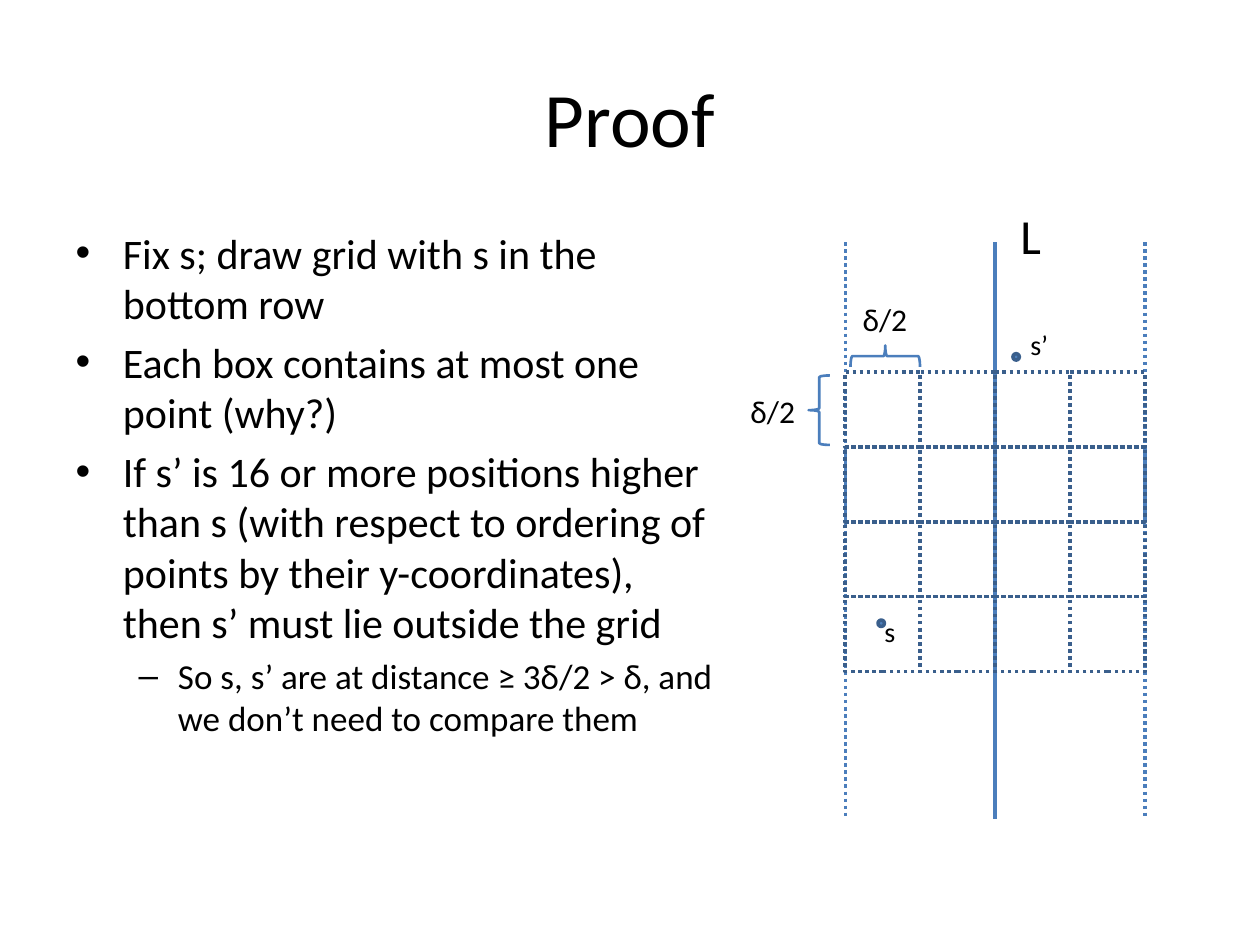
"""Build the slide that proves the closest-pair grid bound."""
import pptx
import pptx.dml.color
import pptx.enum.dml
import pptx.enum.shapes
import pptx.enum.text
import pptx.oxml.ns
import pptx.util
from lxml import etree

Cm, Pt = pptx.util.Cm, pptx.util.Pt
RGB = pptx.dml.color.RGBColor
SHAPE = pptx.enum.shapes.MSO_SHAPE
DOT = pptx.enum.dml.MSO_LINE.ROUND_DOT

BLACK = RGB(0x00, 0x00, 0x00)
BLUE = RGB(0x4B, 0x7E, 0xBC)
DARK_BLUE = RGB(0x3A, 0x5F, 0x8C)
POINT_BLUE = RGB(0x4F, 0x81, 0xBD)

TITLE = "Proof"
BULLETS = [
    (0, 24, "Fix s; draw grid with s in the bottom row"),
    (0, 24, "Each box contains at most one point (why?)"),
    (0, 24, "If s’ is 16 or more positions higher than s (with respect to ordering "
            "of points by their y-coordinates), then s’ must lie outside the grid"),
    (1, 20, "So s, s’ are at distance ≥ 3δ/2 > δ, and we don’t need to compare them"),
]
LABELS = [
    ("L", 28, (20.32, 4.02, 0.94, 1.45)),
    ("δ/2", 18, (14.88, 7.77, 1.4, 1.02)),
    ("δ/2", 18, (17.14, 5.92, 1.4, 1.02)),
    ("s", 16, (17.58, 12.27, 0.74, 0.94)),
    ("s’", 16, (20.52, 6.48, 0.89, 0.94)),
]
BRACES = [((16.3, 7.57, 0.43, 1.4), 0), ((17.63, 6.48, 0.43, 1.4), 90)]
POINTS = [(17.7, 12.5), (20.42, 7.13)]
POINT_SIZE = 0.13
GRID_LEFT, GRID_TOP, CELL, COUNT = 17.04, 7.5, 1.51, 4
STRIP_TOP, STRIP_BOTTOM = 4.88, 16.5
STRIP_LINES = [(2, None), (0, DOT), (4, DOT)]


def set_all(obj, values):
    for name, value in values.items():
        setattr(obj, name, value)


def place(sp, box):
    set_all(sp, dict(zip(("left", "top", "width", "height"), map(Cm, box))))


def write(p, text, size):
    r = p.add_run()
    r.text = text
    set_all(r.font, {"size": Pt(size), "name": "Calibri"})
    r.font.color.rgb = BLACK


def style_line(sp, color, width, dash=None):
    sp.line.color.rgb = color
    set_all(sp.line, {"width": Pt(width), "dash_style": dash})


def add_outline(shapes, kind, box, color, width, dash=None):
    sp = shapes.add_shape(kind, *map(Cm, box))
    sp.shadow.inherit = False
    sp.fill.background()
    style_line(sp, color, width, dash)
    return sp


def add_text(s):
    title, body = s.shapes.title, s.placeholders[1]
    place(title, (1.27, 0.76, 22.86, 3.18))
    place(body, (1.27, 4.45, 13.51, 12.57))
    write(title.text_frame.paragraphs[0], TITLE, 44)
    tf = body.text_frame
    for i, (level, size, text) in enumerate(BULLETS):
        p = tf.add_paragraph() if i else tf.paragraphs[0]
        p.level = level
        write(p, text, size)


def add_strip(s):
    for column, dash in STRIP_LINES:
        x = Cm(GRID_LEFT + column * CELL)
        line = s.shapes.add_connector(
            pptx.enum.shapes.MSO_CONNECTOR.STRAIGHT, x, Cm(STRIP_TOP), x, Cm(STRIP_BOTTOM))
        style_line(line, BLUE, 2, dash)
        etree.SubElement(line._element.spPr, pptx.oxml.ns.qn("a:effectLst"))


def add_grid(s):
    for row in range(COUNT):
        group = s.shapes.add_group_shape()
        for column in range(COUNT):
            box = (GRID_LEFT + column * CELL, GRID_TOP + row * CELL, CELL, CELL)
            add_outline(group.shapes, SHAPE.RECTANGLE, box, DARK_BLUE, 2, DOT)


def add_marks(s):
    for box, angle in BRACES:
        add_outline(s.shapes, SHAPE.LEFT_BRACE, box, BLUE, 1.5).rotation = angle
    for x, y in POINTS:
        sp = add_outline(s.shapes, SHAPE.OVAL, (x, y, POINT_SIZE, POINT_SIZE), DARK_BLUE, 2)
        sp.fill.solid()
        sp.fill.fore_color.rgb = POINT_BLUE
    for text, size, box in LABELS:
        tf = s.shapes.add_textbox(*map(Cm, box)).text_frame
        set_all(tf, {"word_wrap": False,
                     "auto_size": pptx.enum.text.MSO_AUTO_SIZE.SHAPE_TO_FIT_TEXT})
        write(tf.paragraphs[0], text, size)


def main():
    prs = pptx.Presentation()
    set_all(prs, {"slide_width": Cm(25.4), "slide_height": Cm(19.05)})
    s = prs.slides.add_slide(prs.slide_layouts[1])
    for add_part in (add_text, add_strip, add_grid, add_marks):
        add_part(s)
    prs.save("out.pptx")


if __name__ == "__main__":
    main()
